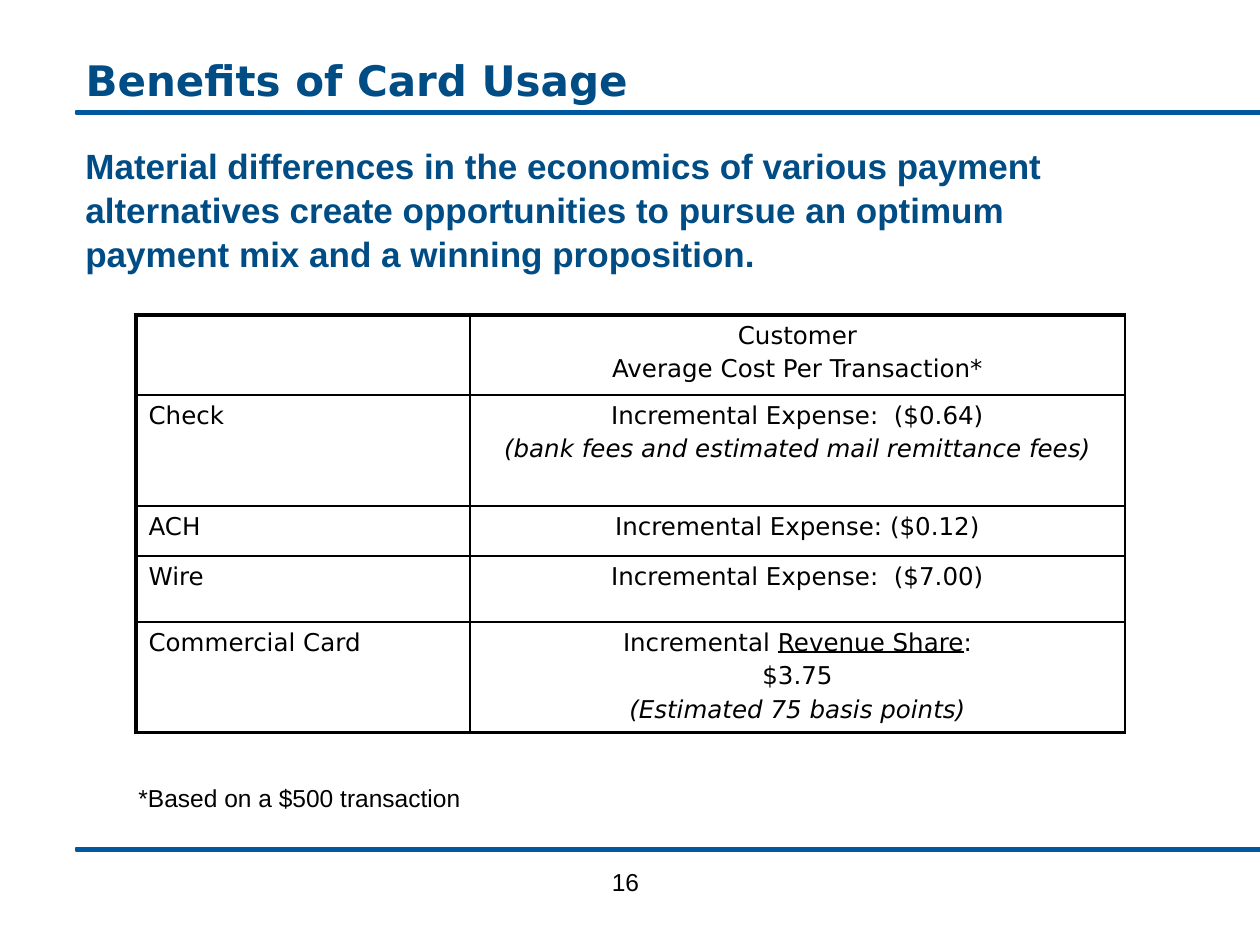
from lxml.etree import SubElement
from pptx import Presentation
from pptx.dml.color import RGBColor
from pptx.enum.shapes import MSO_SHAPE
from pptx.enum.text import MSO_ANCHOR, MSO_AUTO_SIZE, PP_ALIGN
from pptx.oxml.ns import qn
from pptx.util import Emu, Pt

SCALE = 914400 / 126
COLORS = {"rule": "00589E", "heading": "004C84", "text": "000000"}
HEADING = {"name": "DejaVu Sans", "size": Pt(24), "bold": True}
STATEMENT = {"name": "Arial", "size": Pt(20), "bold": True}
NOTE = {"name": "Arial", "size": Pt(14)}
CELL = {"name": "DejaVu Sans", "size": Pt(14)}
ITALIC = {"italic": True}
UNDERLINE = {"underline": True}

COLUMN_WIDTHS = [334, 655]
ROW_HEIGHTS = [80, 111, 50, 66, 110]
THIN, THICK = Pt(1), Pt(2.25)
# Each cell is a list of lines, and each line a list of (text, extra format).
COST_ROWS = [
    ([], [[("Customer", {})], [("Average Cost Per Transaction*", {})]]),
    ([[("Check", {})]],
     [[("Incremental Expense:  ($0.64)", {})],
      [("(bank fees and estimated mail remittance fees)", ITALIC)]]),
    ([[("ACH", {})]], [[("Incremental Expense: ($0.12)", {})]]),
    ([[("Wire", {})]], [[("Incremental Expense:  ($7.00)", {})]]),
    ([[("Commercial Card", {})]],
     [[("Incremental ", {}), ("Revenue Share", UNDERLINE), (":", {})],
      [("$3.75", {})],
      [("(Estimated 75 basis points)", ITALIC)]]),
]


def px(length):
    return Emu(round(length * SCALE))


def to_emu(box):
    return [px(length) for length in box]


def add_run(paragraph, text, style, color):
    run = paragraph.add_run()
    run.text = text
    for attribute, value in style.items():
        setattr(run.font, attribute, value)
    run.font.color.rgb = RGBColor.from_string(COLORS[color])


def add_title(slide, box, text):
    title = slide.shapes.title
    title.left, title.top, title.width, title.height = to_emu(box)
    frame = title.text_frame
    frame.auto_size = MSO_AUTO_SIZE.NONE
    frame.vertical_anchor = MSO_ANCHOR.BOTTOM
    paragraph = frame.paragraphs[0]
    paragraph.alignment = PP_ALIGN.LEFT
    add_run(paragraph, text, HEADING, "heading")


def add_rule(slide, box):
    rule = slide.shapes.add_shape(MSO_SHAPE.RECTANGLE, *to_emu(box))
    rule.shadow.inherit = False
    rule.fill.solid()
    rule.fill.fore_color.rgb = RGBColor.from_string(COLORS["rule"])
    rule.line.color.rgb = RGBColor.from_string(COLORS["rule"])
    rule.line.width = Pt(0.75)


def add_text(slide, box, text, style, color="text", align=PP_ALIGN.LEFT, spacing=1.0):
    frame = slide.shapes.add_textbox(*to_emu(box)).text_frame
    frame.word_wrap = True
    paragraph = frame.paragraphs[0]
    paragraph.alignment = align
    paragraph.line_spacing = spacing
    add_run(paragraph, text, style, color)


def set_borders(cell, widths):
    """Draw the left, right, top and bottom borders, in that order."""
    properties = cell._tc.get_or_add_tcPr()
    for index, (side, width) in enumerate(zip("LRTB", widths)):
        border = SubElement(properties, qn(f"a:ln{side}"), w=str(width))
        fill = SubElement(border, qn("a:solidFill"))
        SubElement(fill, qn("a:srgbClr"), val=COLORS["text"])
        properties.insert(index, border)


def fill_cell(cell, lines, align):
    cell.fill.background()
    frame = cell.text_frame
    for index, line in enumerate(lines):
        paragraph = frame.add_paragraph() if index else frame.paragraphs[0]
        paragraph.alignment = align
        if index:
            paragraph.space_before = Pt(2.8)
        for text, extra in line:
            add_run(paragraph, text, CELL | extra, "text")


def add_cost_table(slide, left, top):
    box = (left, top, sum(COLUMN_WIDTHS), sum(ROW_HEIGHTS))
    table = slide.shapes.add_table(
        len(ROW_HEIGHTS), len(COLUMN_WIDTHS), *to_emu(box)).table
    table.first_row = table.horz_banding = False
    for column, width in zip(table.columns, COLUMN_WIDTHS):
        column.width = px(width)
    for row, height in zip(table.rows, ROW_HEIGHTS):
        row.height = px(height)

    last_row = len(COST_ROWS) - 1
    for row, cells in enumerate(COST_ROWS):
        for column, lines in enumerate(cells):
            cell = table.cell(row, column)
            fill_cell(cell, lines, PP_ALIGN.CENTER if column else PP_ALIGN.LEFT)
            set_borders(cell, [
                THIN if column else THICK,
                THIN,
                THIN if row else THICK,
                THICK if row == last_row else THIN,
            ])


def main():
    presentation = Presentation()
    presentation.slide_width, presentation.slide_height = px(1260), px(945)
    slide = presentation.slides.add_slide(presentation.slide_layouts[5])

    for top in (111, 848):
        add_rule(slide, (76, top, 1184, 3))
    add_title(slide, (73, -5, 1033, 116), "Benefits of Card Usage")
    add_text(slide, (73, 136, 1061, 140),
             "Material differences in the economics of various payment alternatives "
             "create opportunities to pursue an optimum payment mix and a winning "
             "proposition.", STATEMENT, "heading", spacing=1.05)
    add_cost_table(slide, 136, 315)
    add_text(slide, (126, 777, 1061, 86), "*Based on a $500 transaction", NOTE)
    add_text(slide, (426, 861, 399, 66), "16", NOTE, align=PP_ALIGN.CENTER)
    presentation.save("out.pptx")


if __name__ == "__main__":
    main()
